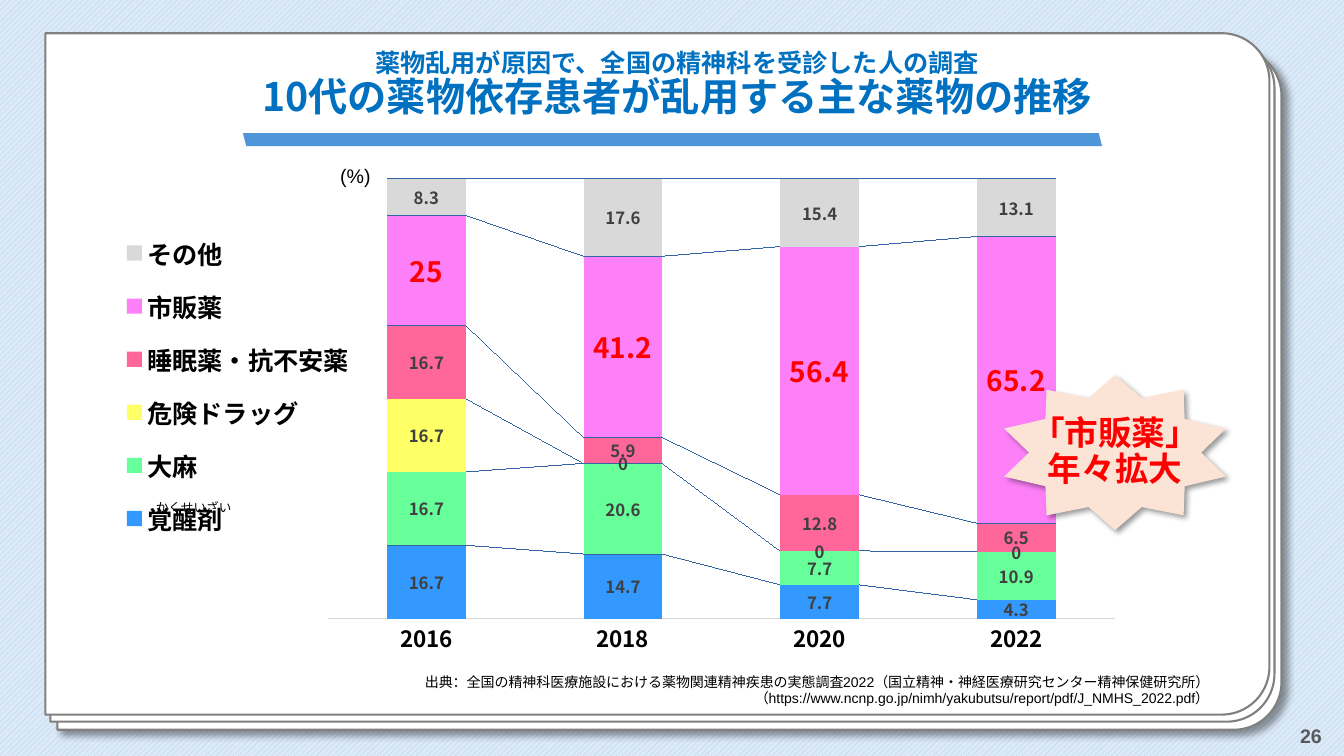
from lxml import etree
from pptx import Presentation
from pptx.chart.data import CategoryChartData
from pptx.dml.color import RGBColor
from pptx.enum.chart import XL_CHART_TYPE, XL_LABEL_POSITION, XL_LEGEND_POSITION, XL_TICK_MARK
from pptx.enum.dml import MSO_PATTERN
from pptx.enum.shapes import MSO_SHAPE
from pptx.enum.text import MSO_ANCHOR, MSO_AUTO_SIZE, PP_ALIGN
from pptx.oxml import parse_xml
from pptx.oxml.ns import nsdecls, qn
from pptx.util import Inches, Pt

LEFT, CENTER, RIGHT = PP_ALIGN.LEFT, PP_ALIGN.CENTER, PP_ALIGN.RIGHT
MIDDLE, BOTTOM = MSO_ANCHOR.MIDDLE, MSO_ANCHOR.BOTTOM
LATIN, JAPANESE = "Arial", "Noto Sans CJK JP"
BLACK, RED, BLUE = "000000", "FF0000", "0070C0"

TITLE = [("薬物乱用が原因で、全国の精神科を受診した人の調査", 18),
         ("10代の薬物依存患者が乱用する主な薬物の推移", 28)]
YEARS = ["2016", "2018", "2020", "2022"]
# drug, shares by year, fill, label size, label colour
DRUGS = [
    ("覚醒剤", (16.7, 14.7, 7.7, 4.3), "3399FF", 12, "404040"),
    ("大麻", (16.7, 20.6, 7.7, 10.9), "66FF99", 12, "404040"),
    ("危険ドラッグ", (16.7, 0, 0, 0), "FFFF66", 12, "404040"),
    ("睡眠薬・抗不安薬", (16.7, 5.9, 12.8, 6.5), "FF6699", 12, "404040"),
    ("市販薬", (25, 41.2, 56.4, 65.2), "FE80F8", 20, RED),
    ("その他", (8.3, 17.6, 15.4, 13.1), "D9D9D9", 12, "404040"),
]
CALLOUT = "「市販薬」\v年々拡大"
SOURCE = ("出典：全国の精神科医療施設における薬物関連精神疾患の実態調査2022"
          "（国立精神・神経医療研究センター精神保健研究所）\v"
          "（https://www.ncnp.go.jp/nimh/yakubutsu/report/pdf/J_NMHS_2022.pdf）")

PAGE_CORNERS = [(3.26, -2.21), (3.19, -2.29), (3.14, -2.36)]  # back to front
PAGE_SIZE = (6.76, 12.14)  # before the quarter turn
PLOT_SHARE = (0.206, 0.021, 0.794, 0.88)
LEGEND_SHARE = (0, 0.1, 0.23, 0.67)


def rgb(value):
    return RGBColor.from_string(value)


def box(*lengths):
    return [Inches(length) for length in lengths]


def style(font, size, color, bold=False, name=LATIN):
    font.size, font.bold, font.name = Pt(size), bold, name
    font.color.rgb = rgb(color)


def add_shadow(shape, distance):
    effects = shape.element.spPr.find(qn("a:effectLst"))
    effects.append(parse_xml(
        f'<a:outerShdw {nsdecls("a")} blurRad="{Pt(4)}" dist="{Pt(distance)}" dir="2700000" '
        'algn="tl" rotWithShape="0"><a:srgbClr val="000000"><a:alpha val="40000"/>'
        '</a:srgbClr></a:outerShdw>'))


def add_panel(slide, preset, place, fill, line=None):
    panel = slide.shapes.add_shape(preset, *box(*place))
    panel.shadow.inherit = False
    panel.fill.solid()
    panel.fill.fore_color.rgb = rgb(fill)
    if line:
        panel.line.color.rgb = rgb(line)
        panel.line.width = Pt(1.5)
    else:
        panel.line.fill.background()
    return panel


def set_insets(frame, *insets):
    frame.margin_left, frame.margin_top, frame.margin_right, frame.margin_bottom = box(*insets)


def add_text(slide, place, text, size, color, align, anchor=MIDDLE, bold=False, grow=True):
    frame = slide.shapes.add_textbox(*box(*place)).text_frame
    frame.word_wrap = not grow
    frame.auto_size = MSO_AUTO_SIZE.SHAPE_TO_FIT_TEXT if grow else MSO_AUTO_SIZE.NONE
    frame.vertical_anchor = anchor
    paragraph = frame.paragraphs[0]
    paragraph.text, paragraph.alignment = text, align
    style(paragraph.font, size, color, bold)
    return frame


def set_layout(parent, index, shares, inner=False):
    """Give a plot area or legend a fixed place, in shares of the chart."""
    for old in parent.findall(qn("c:layout")):
        parent.remove(old)
    layout = parse_xml(f'<c:layout {nsdecls("c")}><c:manualLayout/></c:layout>')
    settings = [("layoutTarget", "inner")] if inner else []
    settings += [("xMode", "edge"), ("yMode", "edge"), *zip("xywh", shares)]
    for tag, value in settings:
        etree.SubElement(layout[0], qn(f"c:{tag}")).set("val", str(value))
    parent.insert(index, layout)


def add_pages(slide):
    for order, corner in enumerate(PAGE_CORNERS):
        page = add_panel(slide, MSO_SHAPE.ROUND_2_SAME_RECTANGLE, corner + PAGE_SIZE,
                         "FFFFFF", "808080")
        page.rotation = 90
        page.adjustments[0], page.adjustments[1] = 0.07, 0
        if order == 0:
            add_shadow(page, 5)


def add_title(slide):
    frame = slide.shapes.add_textbox(*box(2.38, 0.42, 8.67, 0.85)).text_frame
    frame.word_wrap, frame.vertical_anchor = True, BOTTOM
    set_insets(frame, 0.1, 0, 0.1, 0.08)
    paragraph = frame.paragraphs[0]
    paragraph.alignment, paragraph.line_spacing = CENTER, 0.9
    for number, (line, size) in enumerate(TITLE):
        if number:
            paragraph.add_line_break()
        run = paragraph.add_run()
        run.text = line
        style(run.font, size, BLUE, True, JAPANESE)


def add_drug_chart(slide):
    data = CategoryChartData()
    data.categories = YEARS
    for drug, shares, *_ in DRUGS:
        data.add_series(drug, shares)
    chart = slide.shapes.add_chart(XL_CHART_TYPE.COLUMN_STACKED_100,
                                   *box(1.23, 1.67, 9.83, 4.96), data).chart
    style(chart.font, 10, BLACK, name=JAPANESE)
    chart.has_title = False
    plot = chart.plots[0]
    plot.gap_width, plot.overlap, plot.vary_by_categories = 150, 100, False
    for series, (_, _, fill, size, color) in zip(plot.series, DRUGS):
        series.format.fill.solid()
        series.format.fill.fore_color.rgb = rgb(fill)
        labels = series.data_labels
        labels.show_value, labels.position = True, XL_LABEL_POSITION.CENTER
        style(labels.font, size, color, True, JAPANESE)

    chart.value_axis.visible = False
    chart.value_axis.has_major_gridlines = False
    years = chart.category_axis
    years.major_tick_mark = years.minor_tick_mark = XL_TICK_MARK.NONE
    years.format.line.color.rgb = rgb("D9D9D9")
    years.format.line.width = Pt(0.75)
    style(years.tick_labels.font, 16, BLACK, True, JAPANESE)

    chart.has_legend = True
    legend = chart.legend
    legend.position, legend.include_in_layout = XL_LEGEND_POSITION.RIGHT, False
    style(legend.font, 18, BLACK, True, JAPANESE)

    plot_area = chart.element.find(f'.//{qn("c:plotArea")}')
    set_layout(plot_area, 0, PLOT_SHARE, inner=True)
    set_layout(chart.element.find(f'.//{qn("c:legend")}'), 1, LEGEND_SHARE)
    plot_area.find(f'.//{qn("c:overlap")}').addnext(parse_xml(
        f'<c:serLines {nsdecls("c", "a")}><c:spPr><a:ln w="{Pt(0.75)}"><a:solidFill>'
        '<a:srgbClr val="3465A4"/></a:solidFill></a:ln></c:spPr></c:serLines>'))


def add_callout(slide):
    star = add_panel(slide, MSO_SHAPE.STAR_10_POINT, (9.96, 3.72, 2.2, 1.54), "FBE3D6")
    star.adjustments[0] = 0.369
    add_shadow(star, 3)
    frame = star.text_frame
    frame.word_wrap, frame.vertical_anchor = False, MIDDLE
    set_insets(frame, 0, 0, 0, 0)
    paragraph = frame.paragraphs[0]
    paragraph.text, paragraph.alignment, paragraph.line_spacing = CALLOUT, CENTER, 0.9
    style(paragraph.font, 24, RED, True)


def main():
    deck = Presentation()
    deck.slide_width, deck.slide_height = box(13.33, 7.5)
    slide = deck.slides.add_slide(deck.slide_layouts[6])
    backdrop = slide.background.fill
    backdrop.patterned()
    backdrop.pattern = MSO_PATTERN.WIDE_UPWARD_DIAGONAL
    backdrop.fore_color.rgb, backdrop.back_color.rgb = rgb("A6CAEC"), rgb("DCEAF7")

    add_pages(slide)
    add_text(slide, (10.21, 7.1, 3, 0.4), "26", 14, "595959", RIGHT, bold=True, grow=False)
    add_title(slide)
    add_drug_chart(slide)
    add_callout(slide)
    add_text(slide, (4.01, 6.62, 8.08, 0.44), SOURCE, 10, BLACK, RIGHT, BOTTOM)
    rule = add_panel(slide, MSO_SHAPE.PARALLELOGRAM, (2.41, 1.32, 8.52, 0.13), "4E95D9")
    rule.element.spPr.xfrm.set("flipH", "1")
    unit = add_text(slide, (3.37, 1.62, 0.31, 0.24), "(%)", 14, BLACK, CENTER)
    set_insets(unit, 0, 0, 0, 0)
    add_text(slide, (1.44, 4.91, 0.96, 0.25), "かくせいざい", 9, BLACK, CENTER)
    deck.save("out.pptx")


if __name__ == "__main__":
    main()
